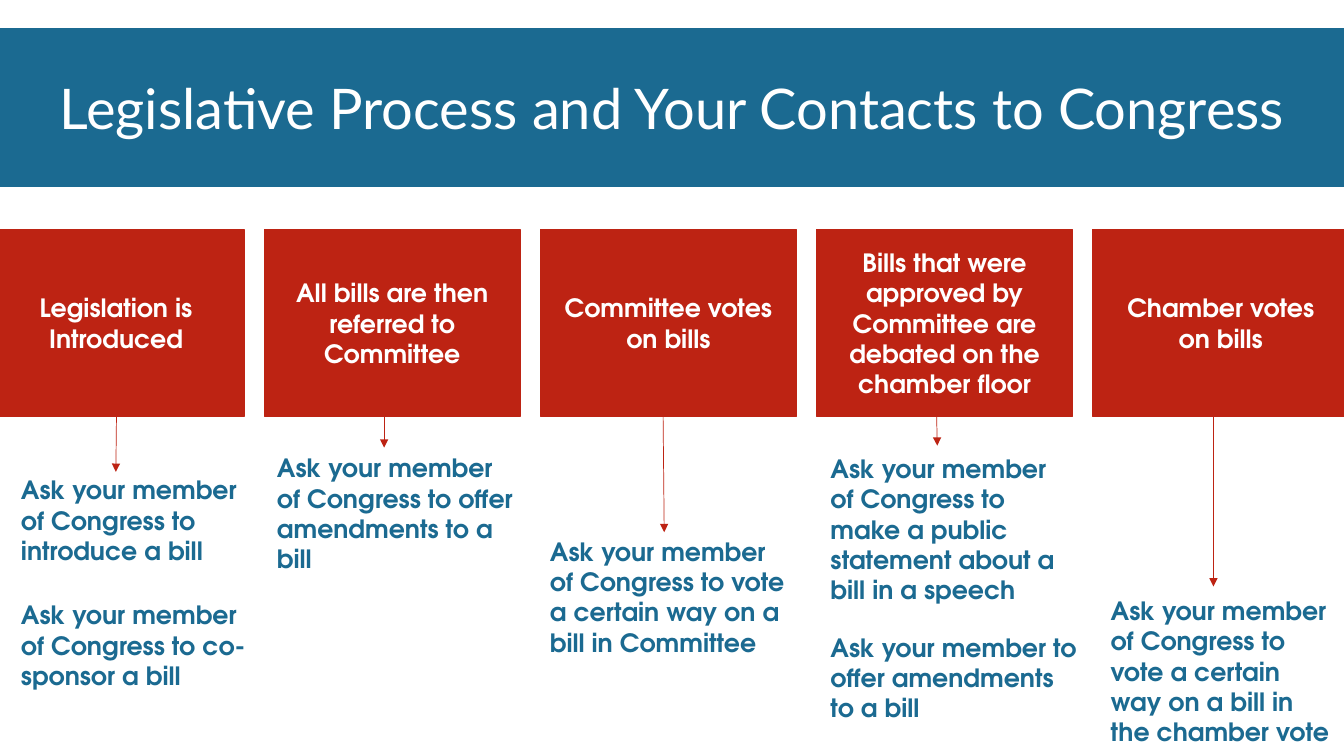
"""Build a slide on the legislative process and when to contact Congress."""
import lxml.etree
import pptx
import pptx.dml.color
import pptx.enum.shapes
import pptx.enum.text
import pptx.oxml.ns
import pptx.util

Cm = pptx.util.Cm
Pt = pptx.util.Pt
Align = pptx.enum.text.PP_ALIGN
Anchor = pptx.enum.text.MSO_ANCHOR

TITLE = "Legislative Process and Your Contacts to Congress"
STAGES = [
    ["Legislation is Introduced"],
    ["All bills are then referred to Committee"],
    ["Committee votes on bills"],
    ["Bills that were approved by Committee are debated on the chamber floor"],
    ["Chamber votes", "on bills"],
]
REQUESTS = [
    ("Ask your member of Congress to introduce a bill", 0.28, 11.84, 6.27, 3),
    ("Ask your member of Congress to co-sponsor a bill", 0.28, 14.99, 6.65, 3),
    ("Ask your member of Congress to offer amendments to a bill", 6.73, 11.28, 6.68, 4),
    ("Ask your member of Congress to vote a certain way on a bill in Committee",
     13.61, 13.39, 6.68, 4),
    ("Ask your member of Congress to make a public statement about a bill in a speech",
     20.68, 11.3, 6.68, 5),
    ("Ask your member to offer amendments to a bill", 20.68, 15.8, 6.86, 3),
    ("Ask your member of Congress to vote a certain way on a bill in the chamber vote",
     27.74, 14.88, 6.15, 5),
]
ARROWS = [
    (2.95, 9.09, 2.92, 11.89),
    (9.68, 9.27, 9.68, 11.28),
    (16.71, 10.41, 16.74, 13.41),
    (23.6, 10.31, 23.62, 11.23),
    (30.58, 10.41, 30.58, 14.78),
]
BLUE, RED, WHITE = "1B6A91", "BD2313", "FFFFFF"
TITLE_FONT, BODY_FONT = "Lato", "TeX Gyre Adventor"
SLIDE_WIDTH, SLIDE_HEIGHT = 33.87, 19.05
BANNER_TOP, BANNER_HEIGHT = 0.74, 3.94
STAGE_LEFT, STAGE_PITCH, STAGE_TOP = -0.3, 6.96, 5.79
STAGE_WIDTH, STAGE_HEIGHT = 6.45, 4.7
LINE_HEIGHT, TEXT_PADDING = 0.77, 0.26


def color(value):
    return pptx.dml.color.RGBColor.from_string(value)


def paint(shape, fill, line_width):
    shape.fill.solid()
    shape.fill.fore_color.rgb = color(fill)
    shape.line.color.rgb = color(fill)
    shape.line.width = Pt(line_width)


def write(shape, lines, font, size, text_color, bold, align, anchor):
    frame = shape.text_frame
    frame.word_wrap = True
    frame.auto_size = pptx.enum.text.MSO_AUTO_SIZE.NONE
    frame.vertical_anchor = anchor
    for index, line in enumerate(lines):
        paragraph = frame.add_paragraph() if index else frame.paragraphs[0]
        paragraph.alignment = align
        run = paragraph.add_run()
        run.text = line
        run.font.name = font
        run.font.size = Pt(size)
        run.font.bold = bold
        run.font.color.rgb = color(text_color)


def add_banner(slide):
    banner = slide.shapes.title
    banner.left, banner.top = Cm(0), Cm(BANNER_TOP)
    banner.width, banner.height = Cm(SLIDE_WIDTH), Cm(BANNER_HEIGHT)
    paint(banner, BLUE, 1.5)
    write(banner, [TITLE], TITLE_FONT, 40, WHITE, False, Align.CENTER, Anchor.MIDDLE)


def add_stage(slide, index, lines):
    stage = slide.shapes.add_shape(
        pptx.enum.shapes.MSO_SHAPE.RECTANGLE,
        Cm(STAGE_LEFT + index * STAGE_PITCH), Cm(STAGE_TOP),
        Cm(STAGE_WIDTH), Cm(STAGE_HEIGHT))
    stage.shadow.inherit = False
    paint(stage, RED, 1)
    write(stage, lines, BODY_FONT, 18, WHITE, True, Align.CENTER, Anchor.MIDDLE)


def add_request(slide, text, left, top, width, line_count):
    height = line_count * LINE_HEIGHT + TEXT_PADDING
    request = slide.shapes.add_textbox(Cm(left), Cm(top), Cm(width), Cm(height))
    write(request, [text], BODY_FONT, 18, BLUE, True, Align.LEFT, Anchor.TOP)


def add_arrow(slide, ends):
    arrow = slide.shapes.add_connector(
        pptx.enum.shapes.MSO_CONNECTOR.STRAIGHT, *[Cm(value) for value in ends])
    arrow.line.color.rgb = color(RED)
    arrow.line.width = Pt(0.5)
    qualified = pptx.oxml.ns.qn
    properties = arrow.element.spPr
    outline = properties.find(qualified("a:ln"))
    lxml.etree.SubElement(outline, qualified("a:tailEnd"), type="triangle")
    lxml.etree.SubElement(properties, qualified("a:effectLst"))


def main():
    presentation = pptx.Presentation()
    presentation.slide_width = Cm(SLIDE_WIDTH)
    presentation.slide_height = Cm(SLIDE_HEIGHT)
    slide = presentation.slides.add_slide(presentation.slide_layouts[5])
    add_banner(slide)
    for index, lines in enumerate(STAGES):
        add_stage(slide, index, lines)
    for request in REQUESTS:
        add_request(slide, *request)
    for ends in ARROWS:
        add_arrow(slide, ends)
    presentation.save("out.pptx")


if __name__ == "__main__":
    main()
